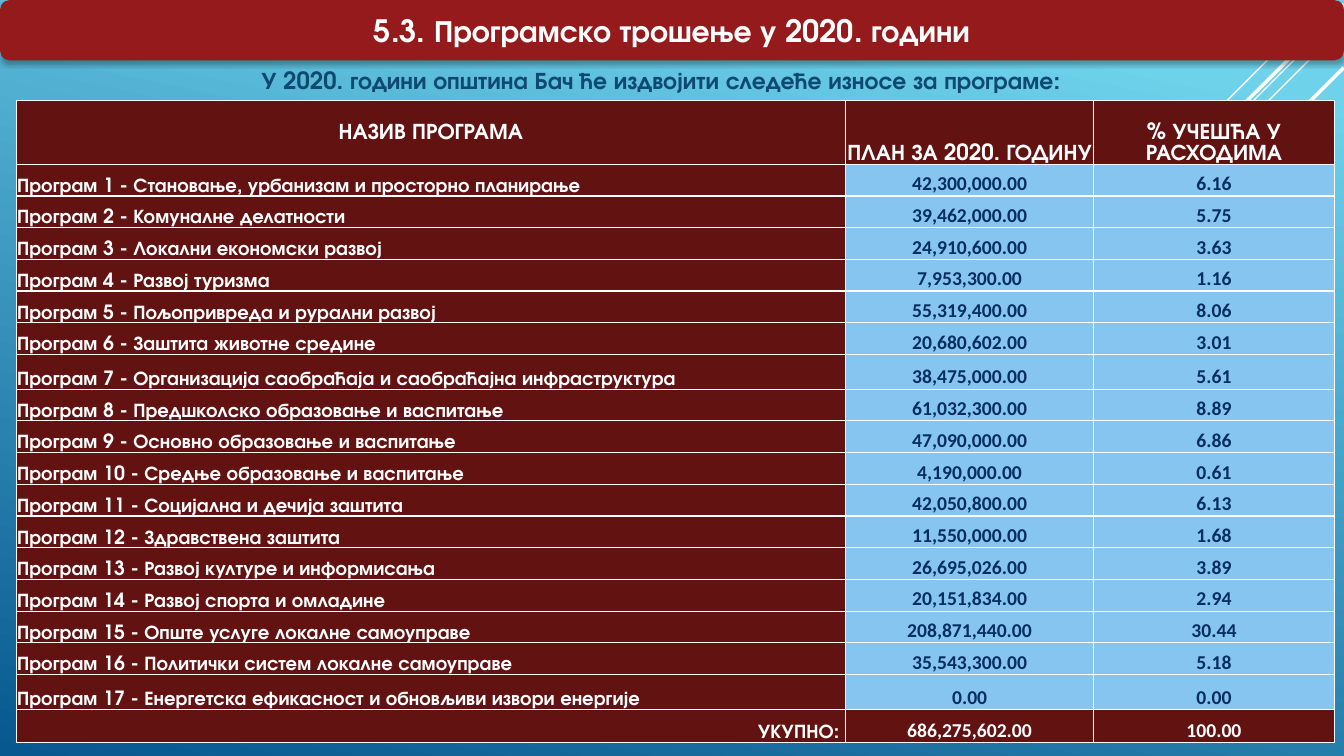
import pptx
import pptx.util
import pptx.dml.color
import pptx.enum.shapes
import pptx.enum.text
import pptx.oxml
import pptx.oxml.ns

Pt = pptx.util.Pt
ALIGN = pptx.enum.text.PP_ALIGN
ANCHOR = pptx.enum.text.MSO_ANCHOR
HEAD_FONT, NUM_FONT = "TeX Gyre Adventor", "Calibri"
WHITE, NAVY, MAROON, SKY = "FFFFFF", "052F61", "631212", "86C5EF"

# Start and end points of the slanted lines, and their width
RAYS = [
    (947.5, 0.7, 648, 301, 1),
    (960, 7.2, 481, 486, 1),
    (960, 18, 569.5, 408.2, 1),
    (960, 2.9, 577.4, 384.5, 2.5),
    (960, 48.2, 617.8, 390.2, 2.5),
]

TITLES = ["НАЗИВ ПРОГРАМА", "ПЛАН ЗА 2020. ГОДИНУ", "% УЧЕШЋА У РАСХОДИМА"]
PROGRAMS = [
    ("Становање, урбанизам и просторно планирање", "42,300,000.00", "6.16"),
    ("Комуналне делатности", "39,462,000.00", "5.75"),
    ("Локални економски развој", "24,910,600.00", "3.63"),
    ("Развој туризма", "7,953,300.00", "1.16"),
    ("Пољопривреда и рурални развој", "55,319,400.00", "8.06"),
    ("Заштита животне средине", "20,680,602.00", "3.01"),
    ("Организација саобраћаја и саобраћајна инфраструктура",
     "38,475,000.00", "5.61"),
    ("Предшколско образовање и васпитање", "61,032,300.00", "8.89"),
    ("Основно образовање и васпитање", "47,090,000.00", "6.86"),
    ("Средње образовање и васпитање", "4,190,000.00", "0.61"),
    ("Социјална и дечија заштита", "42,050,800.00", "6.13"),
    ("Здравствена заштита", "11,550,000.00", "1.68"),
    ("Развој културе и информисања", "26,695,026.00", "3.89"),
    ("Развој спорта и омладине", "20,151,834.00", "2.94"),
    ("Опште услуге локалне самоуправе", "208,871,440.00", "30.44"),
    ("Политички систем локалне самоуправе", "35,543,300.00", "5.18"),
    ("Енергетска ефикасност и обновљиви извори енергије", "0.00", "0.00"),
]
TOTAL = ["УКУПНО: ", "686,275,602.00", "100.00"]

WIDTHS = [592.6, 177.1, 172]
ROW = 22.65
TALL = {0: 45.3, 7: 24.8, 17: 24.9, 18: 23.7}


def color(code):
    return pptx.dml.color.RGBColor.from_string(code)


def paint(item, code):
    item.fill.solid()
    item.fill.fore_color.rgb = color(code)


def write(frame, text, size=14, font=HEAD_FONT, ink=WHITE, align=ALIGN.CENTER):
    frame.word_wrap = True
    para = frame.paragraphs[0]
    para.alignment = align
    run = para.add_run()
    run.text = text
    run.font.size = Pt(size)
    run.font.name = font
    run.font.bold = True
    run.font.color.rgb = color(ink)


def effect(shape, inner=""):
    space = pptx.oxml.ns.nsdecls("a")
    node = pptx.oxml.parse_xml(f"<a:effectLst {space}>{inner}</a:effectLst>")
    shape.element.spPr.append(node)


def add_ray(slide, left, top, right, base, width):
    kind = pptx.enum.shapes.MSO_CONNECTOR.STRAIGHT
    ray = slide.shapes.add_connector(kind, Pt(left), Pt(top), Pt(right), Pt(base))
    ray.line.color.rgb = color(WHITE)
    ray.line.width = Pt(width)
    effect(ray)


def add_banner(slide, text):
    kind = pptx.enum.shapes.MSO_SHAPE.ROUNDED_RECTANGLE
    banner = slide.shapes.add_shape(kind, 0, 0, Pt(960), Pt(43.2))
    paint(banner, "941A1B")
    banner.line.fill.background()
    effect(banner, '<a:outerShdw blurRad="44450" dist="27940" dir="5400000" '
                   'rotWithShape="0"><a:srgbClr val="000000">'
                   '<a:alpha val="32000"/></a:srgbClr></a:outerShdw>')
    banner.text_frame.vertical_anchor = ANCHOR.MIDDLE
    write(banner.text_frame, text, size=22)


def add_intro(slide, text):
    box = slide.shapes.add_textbox(Pt(121), Pt(43.2), Pt(702), Pt(39.6))
    write(box.text_frame, text, size=17, ink="0F496F")


def fill_cell(cell, text, back, anchor=ANCHOR.BOTTOM, **form):
    paint(cell, back)
    cell.margin_left = cell.margin_right = cell.margin_top = Pt(0.7)
    cell.margin_bottom = 0
    cell.vertical_anchor = anchor
    write(cell.text_frame, text, **form)


def add_budget(slide):
    count = len(PROGRAMS) + 2
    heights = [TALL.get(i, ROW) for i in range(count)]
    table = slide.shapes.add_table(count, len(WIDTHS), Pt(11.5), Pt(72),
                                   Pt(sum(WIDTHS)), Pt(sum(heights))).table
    for column, width in zip(table.columns, WIDTHS):
        column.width = Pt(width)
    for row, height in zip(table.rows, heights):
        row.height = Pt(height)

    # Header row
    for j, text in enumerate(TITLES):
        anchor = ANCHOR.BOTTOM if j else ANCHOR.MIDDLE
        fill_cell(table.cell(0, j), text, MAROON, anchor, size=16)

    # One row for each program
    for i, (name, *values) in enumerate(PROGRAMS, 1):
        fill_cell(table.cell(i, 0), f"Програм {i} - {name}", MAROON,
                  align=ALIGN.LEFT)
        for j, value in enumerate(values, 1):
            fill_cell(table.cell(i, j), value, SKY, font=NUM_FONT, ink=NAVY)

    # Total row
    label, *sums = TOTAL
    fill_cell(table.cell(count - 1, 0), label, MAROON, align=ALIGN.RIGHT)
    for j, value in enumerate(sums, 1):
        fill_cell(table.cell(count - 1, j), value, MAROON, font=NUM_FONT)


def set_back(slide):
    fill = slide.background.fill
    fill.gradient()
    fill.gradient_angle = 258
    stops = [(0.1, "6ED2EB"), (1, "06588E")]
    for stop, (place, code) in zip(fill.gradient_stops, stops):
        stop.position = place
        stop.color.rgb = color(code)


def main():
    deck = pptx.Presentation()
    deck.slide_width, deck.slide_height = Pt(960), Pt(540)
    slide = deck.slides.add_slide(deck.slide_layouts[6])
    set_back(slide)
    for ray in RAYS:
        add_ray(slide, *ray)
    add_intro(slide, "У 2020. години општина Бач ће издвојити "
                     "следеће износе за програме:")
    add_banner(slide, "5.3. Програмско трошење у 2020. години")
    add_budget(slide)
    deck.save("out.pptx")


if __name__ == "__main__":
    main()
